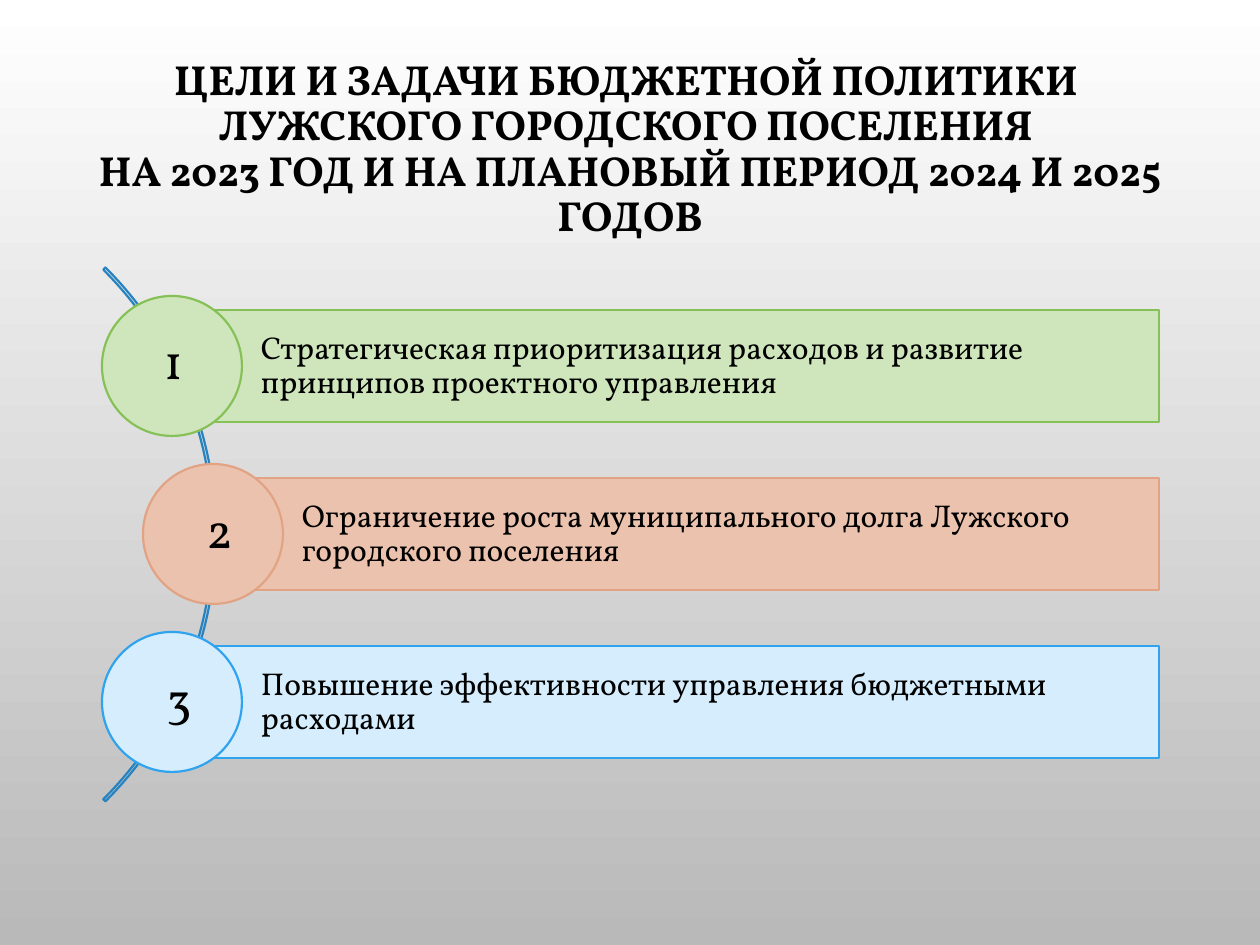
from dataclasses import dataclass
from typing import Any

from pptx import Presentation
from pptx.dml.color import RGBColor
from pptx.enum.shapes import MSO_SHAPE
from pptx.enum.text import MSO_ANCHOR, MSO_AUTO_SIZE, PP_ALIGN
from pptx.util import Emu, Pt

EMU_PER_PX = 914400 / 126


@dataclass(frozen=True)
class Theme:
    font: str = "Vollkorn"
    ink: str = "000000"
    arc: str = "2683BF"
    background: tuple[str, str] = ("FFFFFF", "B9B9B9")
    title_size: int = 24
    goal_size: int = 18
    number_size: int = 28
    outline: float = 1.25


@dataclass(frozen=True)
class Box:
    left: int
    top: int
    width: int
    height: int

    def emu(self) -> tuple[Emu, ...]:
        return tuple(px(n) for n in (self.left, self.top, self.width, self.height))


@dataclass(frozen=True)
class Goal:
    text: str
    fill: str
    line: str
    axis: int  # centre of the circle and left side of the bar
    number_box: Box
    number_wraps: bool = False


THEME = Theme()
BAR_RIGHT, BAR_HEIGHT, CIRCLE = 1159, 112, 140
FIRST_CENTRE, PITCH = 366, 168
GOALS = (
    Goal("Стратегическая приоритизация расходов и развитие принципов проектного управления",
         "CFE6BC", "86C157", 172, Box(134, 324, 79, 72), True),
    Goal("Ограничение роста муниципального долга Лужского городского поселения",
         "EBC2AD", "E2A385", 213, Box(194, 493, 50, 72)),
    Goal("Повышение эффективности управления бюджетными расходами",
         "D5EDFC", "2FA3EE", 172, Box(154, 662, 50, 72)),
)


def px(length: int) -> Emu:
    return Emu(round(length * EMU_PER_PX))


def apply(target: Any, values: dict[str, Any]) -> None:
    for name, value in values.items():
        setattr(target, name, value)


def write(frame: Any, text: str, size: int, frame_format: dict[str, Any],
          paragraph_format: dict[str, Any], bold: bool = False) -> None:
    apply(frame, frame_format)
    paragraph = frame.paragraphs[0]
    paragraph.text = text
    apply(paragraph, paragraph_format)
    for run in paragraph.runs:
        apply(run.font, {"name": THEME.font, "size": Pt(size), "bold": bold})
        run.font.color.rgb = RGBColor.from_string(THEME.ink)


def add_outlined(shapes: Any, kind: MSO_SHAPE, box: Box, line: str,
                 fill: str | None = None) -> Any:
    shape = shapes.add_shape(kind, *box.emu())
    shape.shadow.inherit = False
    if fill:
        shape.fill.solid()
        shape.fill.fore_color.rgb = RGBColor.from_string(fill)
    else:
        shape.fill.background()
    shape.line.color.rgb = RGBColor.from_string(line)
    shape.line.width = Pt(THEME.outline)
    return shape


def add_goal(shapes: Any, goal: Goal, centre: int) -> None:
    bar = add_outlined(
        shapes, MSO_SHAPE.RECTANGLE,
        Box(goal.axis, centre - BAR_HEIGHT // 2, BAR_RIGHT - goal.axis, BAR_HEIGHT),
        goal.line, goal.fill)
    inset = px(6)
    write(bar.text_frame, goal.text, THEME.goal_size,
          {"word_wrap": True, "vertical_anchor": MSO_ANCHOR.MIDDLE, "margin_left": px(89),
           "margin_top": inset, "margin_right": inset, "margin_bottom": inset},
          {"alignment": PP_ALIGN.LEFT, "line_spacing": 0.9})
    add_outlined(shapes, MSO_SHAPE.OVAL,
                 Box(goal.axis - CIRCLE // 2, centre - CIRCLE // 2, CIRCLE, CIRCLE),
                 goal.line, goal.fill)


def add_number(shapes: Any, number: int, goal: Goal) -> None:
    label = shapes.add_textbox(*goal.number_box.emu())
    write(label.text_frame, str(number), THEME.number_size,
          {"word_wrap": goal.number_wraps, "auto_size": MSO_AUTO_SIZE.SHAPE_TO_FIT_TEXT},
          {"alignment": PP_ALIGN.CENTER})


def main() -> None:
    deck = Presentation()
    apply(deck, {"slide_width": px(1260), "slide_height": px(945)})
    slide = deck.slides.add_slide(deck.slide_layouts[5])

    # Background gradient, light at the top
    backdrop = slide.background.fill
    backdrop.gradient()
    backdrop.gradient_angle = 270
    for stop, position, color in zip(backdrop.gradient_stops, (0, 1), THEME.background):
        stop.position = position
        stop.color.rgb = RGBColor.from_string(color)

    # Title
    title = slide.shapes.title
    apply(title, dict(zip(("left", "top", "width", "height"), Box(15, 45, 1230, 210).emu())))
    write(title.text_frame,
          "ЦЕЛИ И ЗАДАЧИ БЮДЖЕТНОЙ ПОЛИТИКИ \vЛУЖСКОГО ГОРОДСКОГО ПОСЕЛЕНИЯ \v"
          "НА 2023 ГОД И НА ПЛАНОВЫЙ ПЕРИОД 2024 И 2025 ГОДОВ",
          THEME.title_size,
          {"word_wrap": True, "auto_size": MSO_AUTO_SIZE.NONE,
           "vertical_anchor": MSO_ANCHOR.MIDDLE},
          {"alignment": PP_ALIGN.CENTER, "line_spacing": 0.9}, bold=True)

    # Arc with the three goals on it
    diagram = slide.shapes.add_group_shape().shapes
    arc = add_outlined(diagram, MSO_SHAPE.BLOCK_ARC, Box(-539, 157, 755, 755), THEME.arc)
    for index, value in enumerate((189, 27, 0.004)):
        arc.adjustments[index] = value
    for index, goal in enumerate(GOALS):
        add_goal(diagram, goal, FIRST_CENTRE + index * PITCH)

    # Goal numbers
    for number, goal in enumerate(GOALS, start=1):
        add_number(slide.shapes, number, goal)

    deck.save("out.pptx")


if __name__ == "__main__":
    main()
